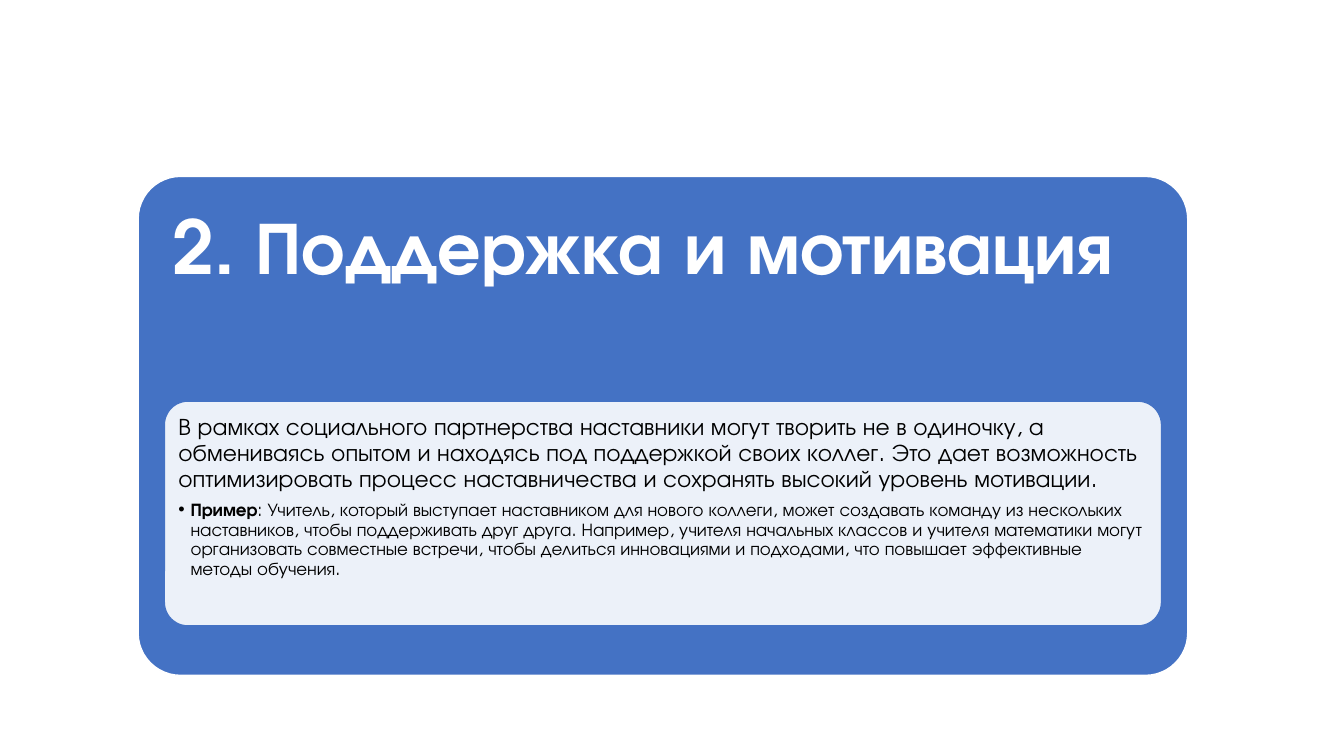
from lxml.etree import SubElement
from pptx import Presentation
from pptx.dml.color import RGBColor
from pptx.enum.shapes import MSO_SHAPE as Shape
from pptx.enum.text import MSO_ANCHOR as Anchor, MSO_AUTO_SIZE as AutoSize, PP_ALIGN as Align
from pptx.oxml.ns import qn
from pptx.util import Pt

PX = 9144  # 100 px to the inch
FONT = "TeX Gyre Adventor"
BLUE = RGBColor(0x44, 0x72, 0xC4)
WHITE = RGBColor(0xFF, 0xFF, 0xFF)
BLACK = RGBColor(0, 0, 0)

deck = Presentation()
deck.slide_width, deck.slide_height = 1333 * PX, 750 * PX
slide = deck.slides.add_slide(deck.slide_layouts[1])
heading, details = slide.placeholders

# Blue card and the pale panel on it, both behind the text
cards = [
    ((137, 175, 1041, 495), 0.085, BLUE, WHITE),
    ((163, 398, 989, 223), 0.105, WHITE, BLUE),
]
for depth, (box, rounding, fill, outline) in enumerate(cards):
    card = slide.shapes.add_shape(Shape.ROUNDED_RECTANGLE, *[n * PX for n in box])
    card.adjustments[0] = rounding
    card.shadow.inherit = False
    card.fill.solid()
    card.fill.fore_color.rgb = fill
    card.line.color.rgb = outline
    card.line.width = Pt(1)
    heading.element.getparent().insert(2 + depth, card.element)

# The panel lets a little of the blue through
panel_color = card.element.spPr.find(qn("a:solidFill"))[0]
SubElement(panel_color, qn("a:alpha"), val="90000")

# Text: box, insets, then paragraphs of (indent, space after, size, runs)
texts = [
    (heading, (149, 187, 1017, 470), (22, 22, 22, 306), WHITE, [
        (0, 0, 53, [("2. Поддержка и мотивация", True)]),
    ]),
    (details, (170, 405, 975, 209), (7, 7, 7, 7), BLACK, [
        (0, 6, 17, [("В рамках социального партнерства наставники могут творить не в "
                     "одиночку, а обмениваясь опытом и находясь под поддержкой своих "
                     "коллег. Это дает возможность оптимизировать процесс "
                     "наставничества и сохранять высокий уровень мотивации.", False)]),
        (12, 2, 13, [("Пример", True),
                     (": Учитель, который выступает наставником для нового коллеги, "
                      "может создавать команду из нескольких наставников, чтобы "
                      "поддерживать друг друга. Например, учителя начальных классов и "
                      "учителя математики могут организовать совместные встречи, чтобы "
                      "делиться инновациями и подходами, что повышает эффективные "
                      "методы обучения.", False)]),
    ]),
]
for holder, box, insets, color, paragraphs in texts:
    holder.left, holder.top, holder.width, holder.height = [n * PX for n in box]
    frame = holder.text_frame
    sides = ("margin_left", "margin_top", "margin_right", "margin_bottom")
    frame_format = dict(zip(sides, [n * PX for n in insets]))
    frame_format |= {"word_wrap": True, "auto_size": AutoSize.NONE,
                     "vertical_anchor": Anchor.TOP}
    for name, value in frame_format.items():
        setattr(frame, name, value)

    for number, (indent, after, size, runs) in enumerate(paragraphs):
        paragraph = frame.add_paragraph() if number else frame.paragraphs[0]
        paragraph_format = {"alignment": Align.LEFT, "line_spacing": 0.9,
                            "space_before": Pt(0), "space_after": Pt(after),
                            "level": 1 if indent else 0}
        for name, value in paragraph_format.items():
            setattr(paragraph, name, value)

        # Hanging bullet for the indented example only
        properties = paragraph._p.get_or_add_pPr()
        properties.set("marL", str(indent * PX))
        properties.set("indent", str(-indent * PX))
        if indent:
            SubElement(properties, qn("a:buChar"), char="•")
        else:
            SubElement(properties, qn("a:buNone"))

        for words, bold in runs:
            run = paragraph.add_run()
            run.text = words
            run.font.color.rgb = color
            for name, value in {"name": FONT, "size": Pt(size), "bold": bold}.items():
                setattr(run.font, name, value)

deck.save("out.pptx")
